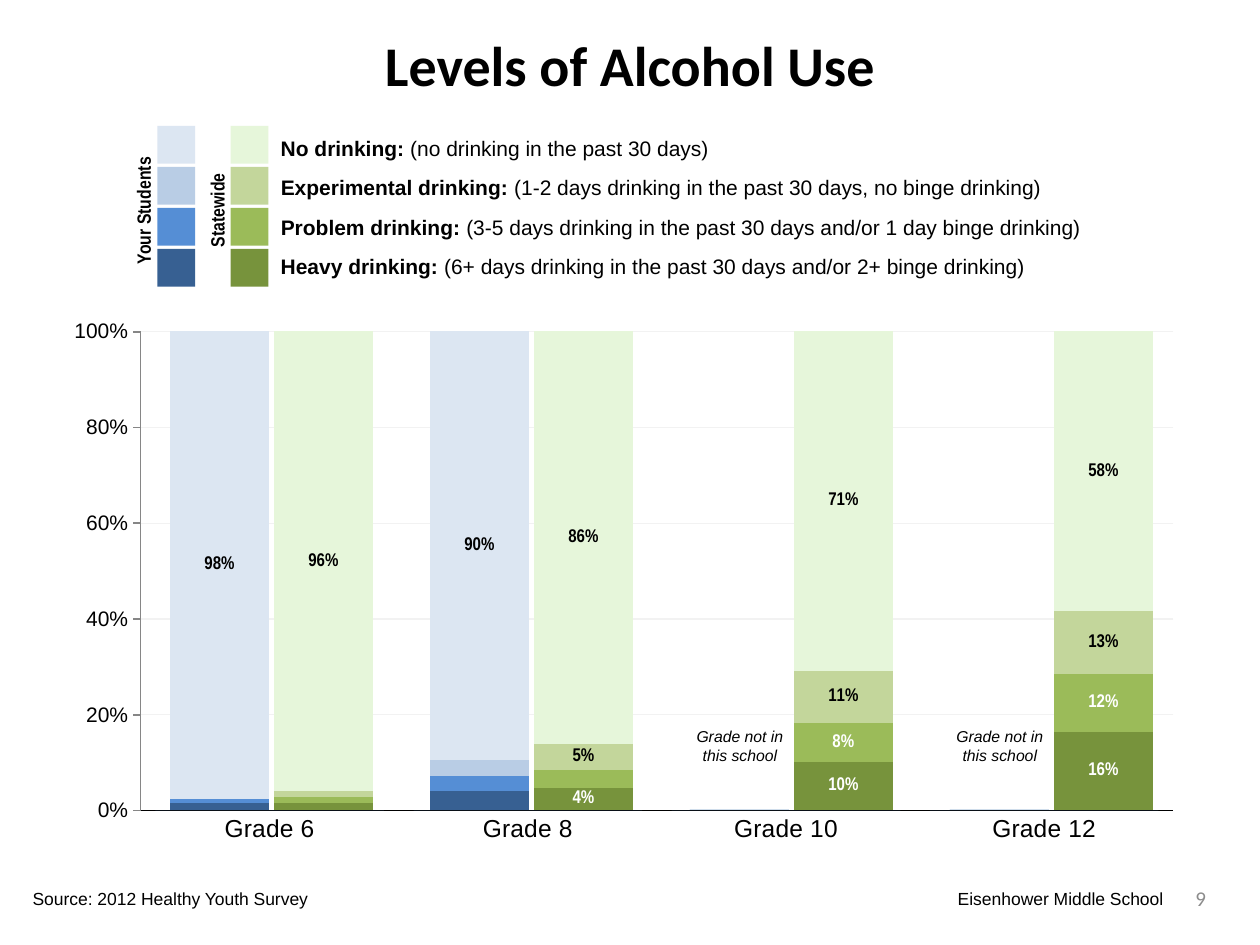
from lxml.etree import SubElement
from pptx import Presentation
from pptx.chart.data import CategoryChartData
from pptx.dml.color import RGBColor
from pptx.enum.chart import XL_CHART_TYPE as ChartType, XL_LABEL_POSITION as LabelPos
from pptx.enum.chart import XL_TICK_LABEL_POSITION as TickLabels, XL_TICK_MARK as Tick
from pptx.enum.shapes import MSO_SHAPE as Shape
from pptx.enum.text import MSO_ANCHOR as Anchor, MSO_AUTO_SIZE as AutoSize, PP_ALIGN as Align
from pptx.oxml import parse_xml
from pptx.oxml.ns import nsdecls, qn
from pptx.util import Inches, Pt

COLORS = {"black": "000000", "white": "FFFFFF", "grid": "F2F2F2", "axis": "868686", "number": "8C8C8C"}
STUDENTS = ["376092", "558ED5", "B9CDE5", "DCE6F2"]
STATEWIDE = ["77933C", "9BBB59", "C3D69B", "E6F6DA"]
LEVELS = [
    ("No drinking: ", "(no drinking in the past 30 days)", 3.63),
    ("Experimental drinking: ", "(1-2 days drinking in the past 30 days, no binge drinking)", 6.29),
    ("Problem drinking: ", "(3-5 days drinking in the past 30 days and/or 1 day binge drinking)", 6.61),
    ("Heavy drinking: ", "(6+ days drinking in the past 30 days and/or 2+ binge drinking)", 6.16),
]
GRADES = {
    "Grade 6": [(0.013, 0.013), (0.013, 0.009), (0.012, 0), (0.962, 0.978)],
    "Grade 8": [(0.044, 0.039), (0.039, 0.032), (0.053, 0.032), (0.864, 0.897)],
    "Grade 10": [(0.1, 0), (0.08, 0), (0.11, 0), (0.71, 0)],
    "Grade 12": [(0.16, 0), (0.12, 0), (0.13, 0), (0.58, 0)],
}


def rgb(value):
    """Return a colour from a hex string."""
    return RGBColor.from_string(value)


def set_font(font, size, name="Arial", color=COLORS["black"], bold=False, italic=False):
    """Set every property of a font."""
    font.size, font.name, font.bold, font.italic = Pt(size), name, bold, italic
    font.color.rgb = rgb(color)


def add_text(page, box, text, size, align=Align.LEFT, anchor=Anchor.TOP, wrap=True, **style):
    """Add a one-paragraph text box and return it."""
    shape = page.shapes.add_textbox(*map(Inches, box))
    frame = shape.text_frame
    frame.word_wrap, frame.vertical_anchor = wrap, anchor
    frame.auto_size = AutoSize.NONE if wrap else AutoSize.SHAPE_TO_FIT_TEXT
    para = frame.paragraphs[0]
    para.text, para.alignment = text, align
    set_font(para.font, size, **style)
    return shape


def add_title(page, box, text):
    """Place and format the slide title."""
    title = page.shapes.title
    title.left, title.top, title.width, title.height = map(Inches, box)
    title.text_frame.vertical_anchor = Anchor.MIDDLE
    para = title.text_frame.paragraphs[0]
    para.text, para.alignment = text, Align.CENTER
    set_font(para.font, 32, "Calibri", bold=True)


def add_swatches(page, left, top, colors):
    """Stack the colour swatches of one group, lightest first."""
    for row, color in enumerate(reversed(colors)):
        box = (left, top + 0.325 * row, 0.3, 0.3)
        swatch = page.shapes.add_shape(Shape.RECTANGLE, *map(Inches, box))
        swatch.shadow.inherit = False
        swatch.fill.solid()
        swatch.fill.fore_color.rgb = rgb(color)
        swatch.line.fill.background()


def add_legend(page, left, top):
    """Add both swatch columns, their names and the level descriptions."""
    groups = [
        ("Your Students", STUDENTS, 0, (-0.64, 0.52, 1.06, 0.29)),
        ("Statewide", STATEWIDE, 0.58, (0.08, 0.52, 0.79, 0.29)),
    ]
    for name, colors, offset, (x, y, width, height) in groups:
        add_swatches(page, left + offset, top, colors)
        label = add_text(page, (left + x, top + y, width, height), name, 11,
                         wrap=False, name="Arial Narrow", bold=True)
        label.rotation = 270
    for row, (level, meaning, width) in enumerate(LEVELS):
        box = (left + 0.88, top + 0.03 + 0.31 * row, width, 0.3)
        para = add_text(page, box, level, 12, wrap=False).text_frame.paragraphs[0]
        para.runs[0].font.bold = True
        para.add_run().text = meaning


def add_stacked_chart(page, box, categories, series, gap, plot_box):
    """Add a stacked percentage chart with a fixed, unfilled plot area."""
    data = CategoryChartData()
    data.categories = categories
    for number, values in enumerate(series, 1):
        data.add_series(f"Series {number}", values)
    chart = page.shapes.add_chart(ChartType.COLUMN_STACKED_100, *map(Inches, box), data).chart
    chart.has_legend = chart.has_title = False
    set_font(chart.font, 10, "Calibri")
    plot = chart.plots[0]
    plot.gap_width, plot.overlap, plot.vary_by_categories = gap, 100, False
    axis = chart.value_axis
    axis.minimum_scale, axis.maximum_scale, axis.major_unit = 0, 1, 0.2
    axis.has_major_gridlines = False
    chart.category_axis.major_tick_mark = Tick.NONE

    space = chart._chartSpace
    area = space.find(f".//{qn('c:plotArea')}")
    for old in area.findall(qn("c:layout")):
        area.remove(old)
    layout = parse_xml(f"<c:layout {nsdecls('c')}/>")
    manual = SubElement(layout, qn("c:manualLayout"))
    settings = zip(("layoutTarget", "xMode", "yMode", "x", "y", "w", "h"),
                   ("inner", "edge", "edge", *plot_box))
    for tag, value in settings:
        SubElement(manual, qn(f"c:{tag}")).set("val", str(value))
    area.insert(0, layout)
    clear = f"<c:spPr {nsdecls('c', 'a')}><a:noFill/><a:ln><a:noFill/></a:ln></c:spPr>"
    area.append(parse_xml(clear))
    space.find(qn("c:chart")).addnext(parse_xml(clear))
    return chart


def add_axes_chart(page, box):
    """Add the empty chart that carries the shared axes and gridlines."""
    chart = add_stacked_chart(page, box, list(GRADES), [[0] * len(GRADES)], 13,
                              (0.06, 0.031, 0.938, 0.884))
    grades, percent = chart.category_axis, chart.value_axis
    set_font(grades.tick_labels.font, 14)
    set_font(percent.tick_labels.font, 12)
    percent.tick_labels.number_format = "0%"
    percent.tick_labels.number_format_is_linked = False
    percent.major_tick_mark = Tick.OUTSIDE
    percent.has_major_gridlines = True
    lines = [(grades, "black", 1), (percent, "axis", 1), (percent.major_gridlines, "grid", 0.75)]
    for part, color, width in lines:
        part.format.line.color.rgb = rgb(COLORS[color])
        part.format.line.width = Pt(width)


def add_grade_chart(page, box, levels):
    """Add the pair of stacked columns for one grade."""
    chart = add_stacked_chart(page, box, ["1", "2"], levels, 5, (0, 0.02, 1, 0.937))
    chart.category_axis.reverse_order = True
    for axis in (chart.category_axis, chart.value_axis):
        axis.tick_label_position = TickLabels.NONE
        axis.major_tick_mark = Tick.NONE
        axis.format.line.fill.background()
    for number, series in enumerate(chart.plots[0].series):
        for target, colors in ((series, STUDENTS), (series.points[0], STATEWIDE)):
            target.format.fill.solid()
            target.format.fill.fore_color.rgb = rgb(colors[number])
        labels = series.data_labels
        labels.show_value, labels.position = True, LabelPos.CENTER
        labels.number_format, labels.number_format_is_linked = '[<0.04]" ";0%', False
        color = COLORS["white" if number < 2 else "black"]
        set_font(labels.font, 10.5, "Arial Narrow", color, bold=True)


def add_missing_note(page, box):
    """Mark a grade that the school does not have."""
    note = add_text(page, box, "Grade not in this school", 9, Align.CENTER, Anchor.BOTTOM, italic=True)
    frame = note.text_frame
    frame.margin_left = frame.margin_top = frame.margin_right = 0
    frame.margin_bottom = Inches(0.1)


def add_results(page, left, top):
    """Add the axes, a column pair for each grade and the notes."""
    add_axes_chart(page, (left, top, 8.74, 4.3))
    for index, levels in enumerate(GRADES.values()):
        x = left + 0.74 + 6.19 / 3 * index
        add_grade_chart(page, (x, top + 0.05, 1.65, 4.05), levels)
        if not any(students for _, students in levels):
            add_missing_note(page, (x + 0.04, top + 2.17, 0.75, 1.5))


def add_footer(page, top):
    """Add the source, the school and the page number."""
    add_text(page, (0.16, top, 2.42, 0.27), "Source: 2012 Healthy Youth Survey", 10, wrap=False)
    add_text(page, (3.25, top, 6.08, 0.27), "Eisenhower Middle School", 10, Align.RIGHT)
    add_text(page, (9.17, top - 0.07, 0.5, 0.4), "9", 12, Align.RIGHT, Anchor.MIDDLE,
             name="Calibri", color=COLORS["number"])


def main():
    """Build and save the deck."""
    deck = Presentation()
    deck.slide_width, deck.slide_height = Inches(10), Inches(7.5)
    page = deck.slides.add_slide(deck.slide_layouts[5])
    add_title(page, (0.25, 0.17, 9.5, 0.67), "Levels of Alcohol Use")
    add_results(page, 0.59, 2.5)
    add_legend(page, 1.25, 1)
    add_footer(page, 7)
    deck.save("out.pptx")


if __name__ == "__main__":
    main()
